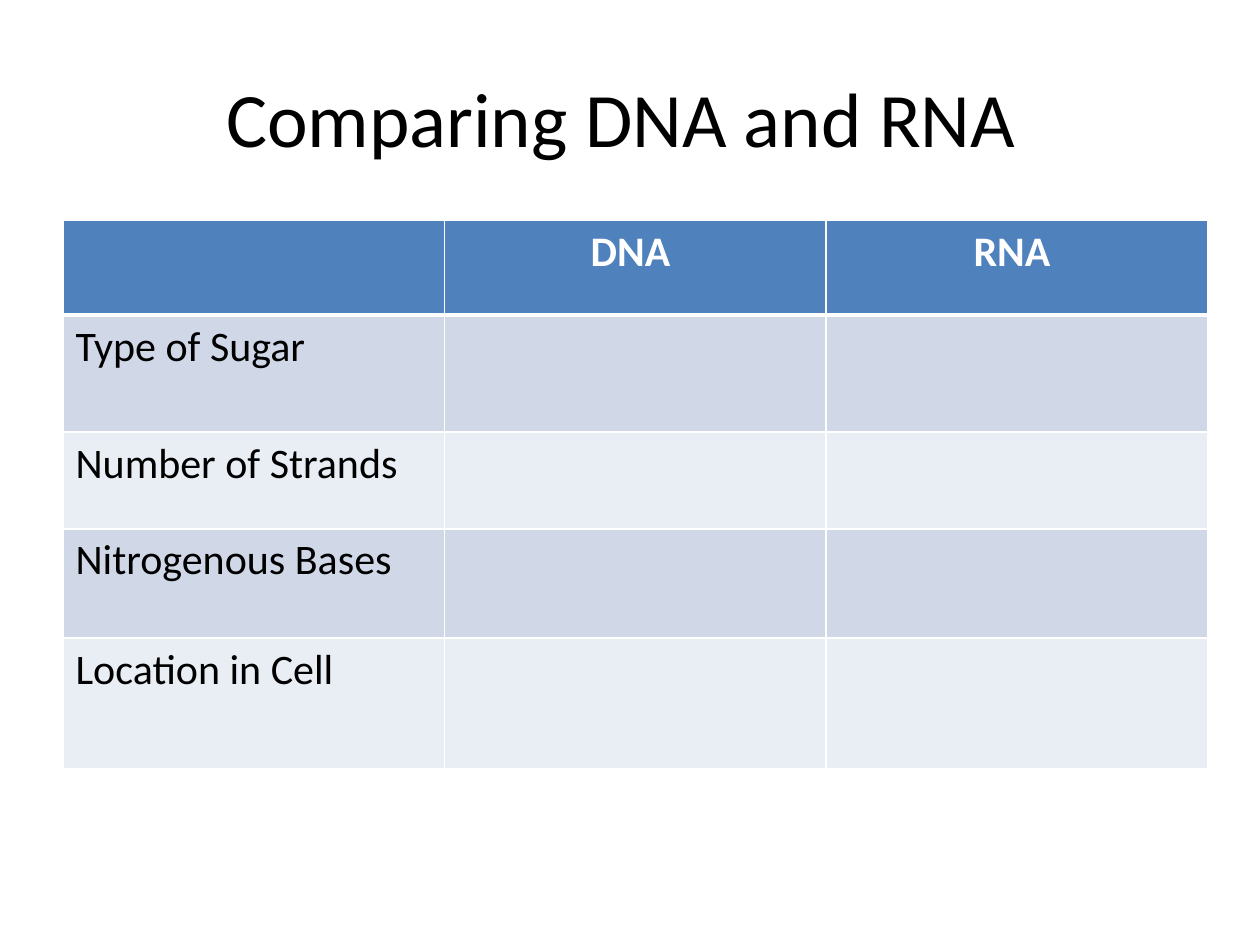
import dataclasses

import pptx
import pptx.dml.color
import pptx.enum.text
import pptx.oxml
import pptx.oxml.ns
import pptx.util

Pt = pptx.util.Pt
RGB = pptx.dml.color.RGBColor.from_string
ALIGN = pptx.enum.text.PP_ALIGN
ANCHOR = pptx.enum.text.MSO_ANCHOR


@dataclasses.dataclass(frozen=True)
class Theme:
    font: str = "Calibri"
    title_size: int = 44
    table_size: int = 24
    text: str = "000000"
    header_text: str = "FFFFFF"
    header_fill: str = "4F81BD"
    bands: tuple = ("D0D8E8", "E9EDF4")
    border: str = "FFFFFF"
    thin: int = 1
    thick: int = 3


THEME = Theme()

ROWS = [
    ("", "DNA ", "RNA "),
    ("Type of Sugar", "", ""),
    ("Number of Strands", "", ""),
    ("Nitrogenous Bases", "", ""),
    ("Location in Cell", "", ""),
]
ROW_HEIGHTS = [54, 66.8, 55.4, 62.4, 75]
COL_WIDTH = 218


def format_text(p, size, color, align, bold=False):
    p.alignment = align
    p.font.name = THEME.font
    p.font.size = Pt(size)
    p.font.bold = bold
    p.font.color.rgb = RGB(color)


def add_title(s, text):
    sp = s.shapes.title
    sp.left, sp.top, sp.width, sp.height = Pt(36), Pt(21.6), Pt(648), Pt(90)
    tf = sp.text_frame
    tf.text = text
    tf.vertical_anchor = ANCHOR.MIDDLE
    format_text(tf.paragraphs[0], THEME.title_size, THEME.text, ALIGN.CENTER)


def set_borders(cell, top, bottom):
    """Draw the four cell edges; the sides are always thin."""
    tc_pr = cell._tc.get_or_add_tcPr()
    widths = {"lnL": THEME.thin, "lnR": THEME.thin, "lnT": top, "lnB": bottom}
    for tag, width in widths.items():
        tc_pr.append(pptx.oxml.parse_xml(
            f'<a:{tag} {pptx.oxml.ns.nsdecls("a")} w="{Pt(width)}"><a:solidFill>'
            f'<a:srgbClr val="{THEME.border}"/></a:solidFill></a:{tag}>'))


def format_cell(cell, text, row):
    header = row == 0
    # The thick rule lies between the header and the first body row
    set_borders(cell,
                top=THEME.thick if row == 1 else THEME.thin,
                bottom=THEME.thick if header else THEME.thin)
    cell.fill.solid()
    cell.fill.fore_color.rgb = RGB(
        THEME.header_fill if header else THEME.bands[(row - 1) % 2])
    cell.text = text
    format_text(cell.text_frame.paragraphs[0], THEME.table_size,
                THEME.header_text if header else THEME.text,
                ALIGN.CENTER if header else ALIGN.LEFT, bold=header)


def add_comparison_table(s):
    cols = len(ROWS[0])
    table = s.shapes.add_table(len(ROWS), cols, Pt(36), Pt(126),
                               Pt(COL_WIDTH * cols), Pt(sum(ROW_HEIGHTS))).table
    for col in table.columns:
        col.width = Pt(COL_WIDTH)
    for i, (texts, height) in enumerate(zip(ROWS, ROW_HEIGHTS)):
        table.rows[i].height = Pt(height)
        for j, text in enumerate(texts):
            format_cell(table.cell(i, j), text, i)


def main():
    prs = pptx.Presentation()
    prs.slide_width, prs.slide_height = Pt(720), Pt(540)
    s = prs.slides.add_slide(prs.slide_layouts[5])  # title only

    # Heading
    add_title(s, "Comparing DNA and RNA ")

    # Table to fill in
    add_comparison_table(s)

    prs.save("out.pptx")


if __name__ == "__main__":
    main()
